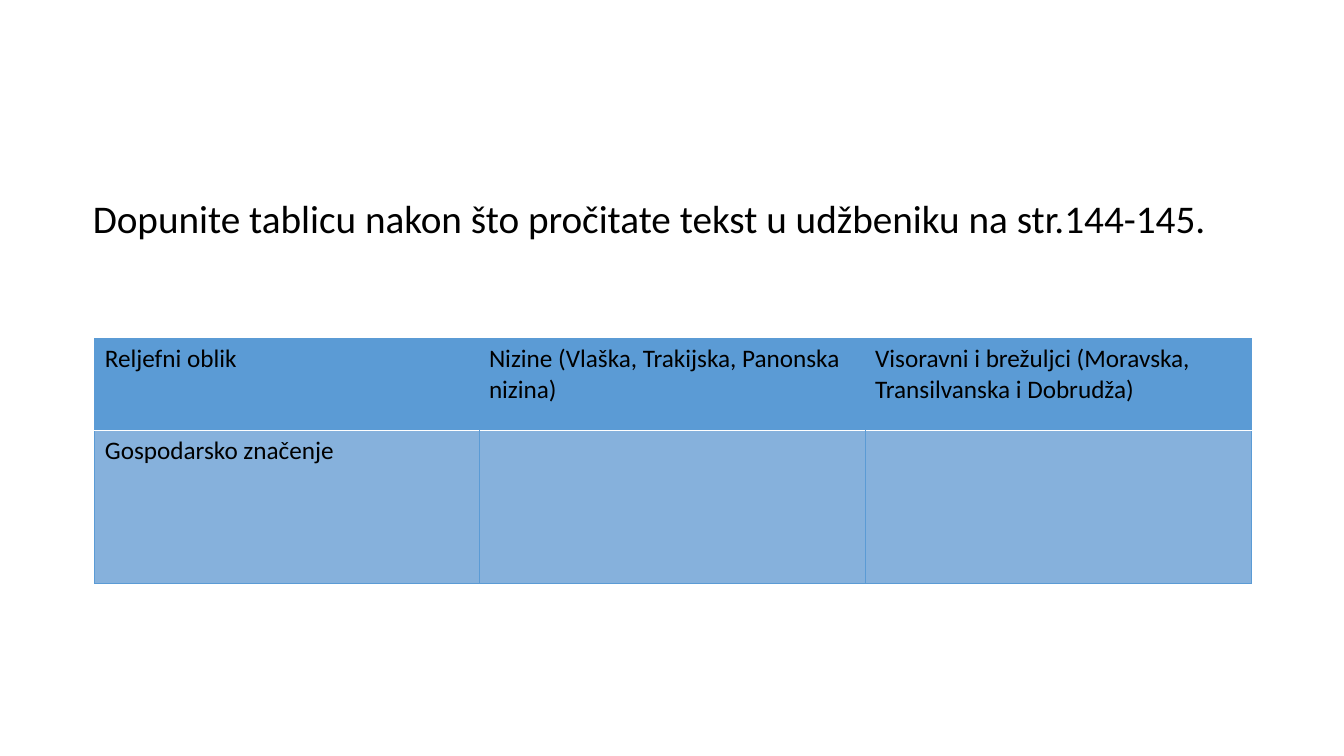
from dataclasses import dataclass

from lxml import etree
from pptx import Presentation
from pptx.dml.color import RGBColor
from pptx.enum.text import MSO_ANCHOR, MSO_AUTO_SIZE, PP_ALIGN
from pptx.oxml.ns import qn
from pptx.slide import Slide
from pptx.table import _Cell
from pptx.util import Inches, Pt

TOP = MSO_ANCHOR.TOP
NO_AUTOFIT = MSO_AUTO_SIZE.NONE
LEFT = PP_ALIGN.LEFT

BLUE = RGBColor(0x5B, 0x9B, 0xD5)
LIGHT_BLUE = RGBColor(0x86, 0xB1, 0xDC)
WHITE = RGBColor(0xFF, 0xFF, 0xFF)
BLACK = RGBColor(0x00, 0x00, 0x00)

FONT = "Calibri"
TITLE_ONLY_LAYOUT = 5
TABLE_LEFT, TABLE_TOP = Inches(0.94), Inches(3.36)
COLUMN_WIDTHS = [Inches(width) for width in (3.81, 3.83, 3.83)]


@dataclass(frozen=True)
class Border:
    color: RGBColor
    points: float


@dataclass(frozen=True)
class TableRow:
    height: float
    texts: tuple[str, ...]
    fill: RGBColor
    top: Border
    bottom: Border
    inner: Border | None


THIN = Border(BLUE, 0.5)
DIVIDER = Border(WHITE, 1)

TITLE = "Dopunite tablicu nakon što pročitate tekst u udžbeniku na str.144-145."
ROWS = (
    TableRow(
        0.91,
        (
            "Reljefni oblik",
            "Nizine (Vlaška, Trakijska, Panonska nizina)",
            "Visoravni i brežuljci (Moravska, Transilvanska i Dobrudža)",
        ),
        BLUE, top=THIN, bottom=DIVIDER, inner=None,
    ),
    TableRow(
        1.52, ("Gospodarsko značenje", "", ""),
        LIGHT_BLUE, top=DIVIDER, bottom=THIN, inner=THIN,
    ),
)


def set_border(cell: _Cell, tag: str, border: Border | None) -> None:
    """Append one cell edge; edges must precede the cell's fill."""
    line = etree.SubElement(cell._tc.get_or_add_tcPr(), qn(tag))
    if border is None:
        etree.SubElement(line, qn("a:noFill"))
        return
    line.set("w", str(Pt(border.points)))
    solid = etree.SubElement(line, qn("a:solidFill"))
    etree.SubElement(solid, qn("a:srgbClr"), val=str(border.color))


def add_title(slide: Slide) -> None:
    title = slide.shapes.title
    title.left, title.top = Inches(0.92), Inches(1.98)
    title.width, title.height = Inches(11.5), Inches(0.84)
    frame = title.text_frame
    frame.text = TITLE
    frame.word_wrap = True
    frame.auto_size = NO_AUTOFIT
    frame.vertical_anchor = TOP
    frame.margin_left = frame.margin_right = 0
    frame.margin_top = frame.margin_bottom = 0
    paragraph = frame.paragraphs[0]
    paragraph.alignment = LEFT
    paragraph.line_spacing = 0.9
    paragraph.font.name = FONT
    paragraph.font.size = Pt(28)
    paragraph.font.color.rgb = BLACK


def fill_cell(cell: _Cell, row: TableRow, column: int) -> None:
    last = len(COLUMN_WIDTHS) - 1
    set_border(cell, "a:lnL", THIN if column == 0 else row.inner)
    set_border(cell, "a:lnR", THIN if column == last else row.inner)
    set_border(cell, "a:lnT", row.top)
    set_border(cell, "a:lnB", row.bottom)
    cell.fill.solid()
    cell.fill.fore_color.rgb = row.fill
    cell.text = row.texts[column]
    font = cell.text_frame.paragraphs[0].font
    font.name = FONT
    font.size = Pt(18)
    font.color.rgb = BLACK


def add_relief_table(slide: Slide) -> None:
    height = Inches(sum(row.height for row in ROWS))
    table = slide.shapes.add_table(
        len(ROWS), len(COLUMN_WIDTHS),
        TABLE_LEFT, TABLE_TOP, sum(COLUMN_WIDTHS), height,
    ).table
    table.first_row = table.horz_banding = False
    for column, width in enumerate(COLUMN_WIDTHS):
        table.columns[column].width = width
    for index, row in enumerate(ROWS):
        table.rows[index].height = Inches(row.height)
        for column in range(len(COLUMN_WIDTHS)):
            fill_cell(table.cell(index, column), row, column)


def main() -> None:
    presentation = Presentation()
    presentation.slide_width = Inches(13.33)
    presentation.slide_height = Inches(7.5)
    layout = presentation.slide_layouts[TITLE_ONLY_LAYOUT]
    slide = presentation.slides.add_slide(layout)
    # Instruction above, table to complete below
    add_title(slide)
    add_relief_table(slide)
    presentation.save("out.pptx")


if __name__ == "__main__":
    main()
